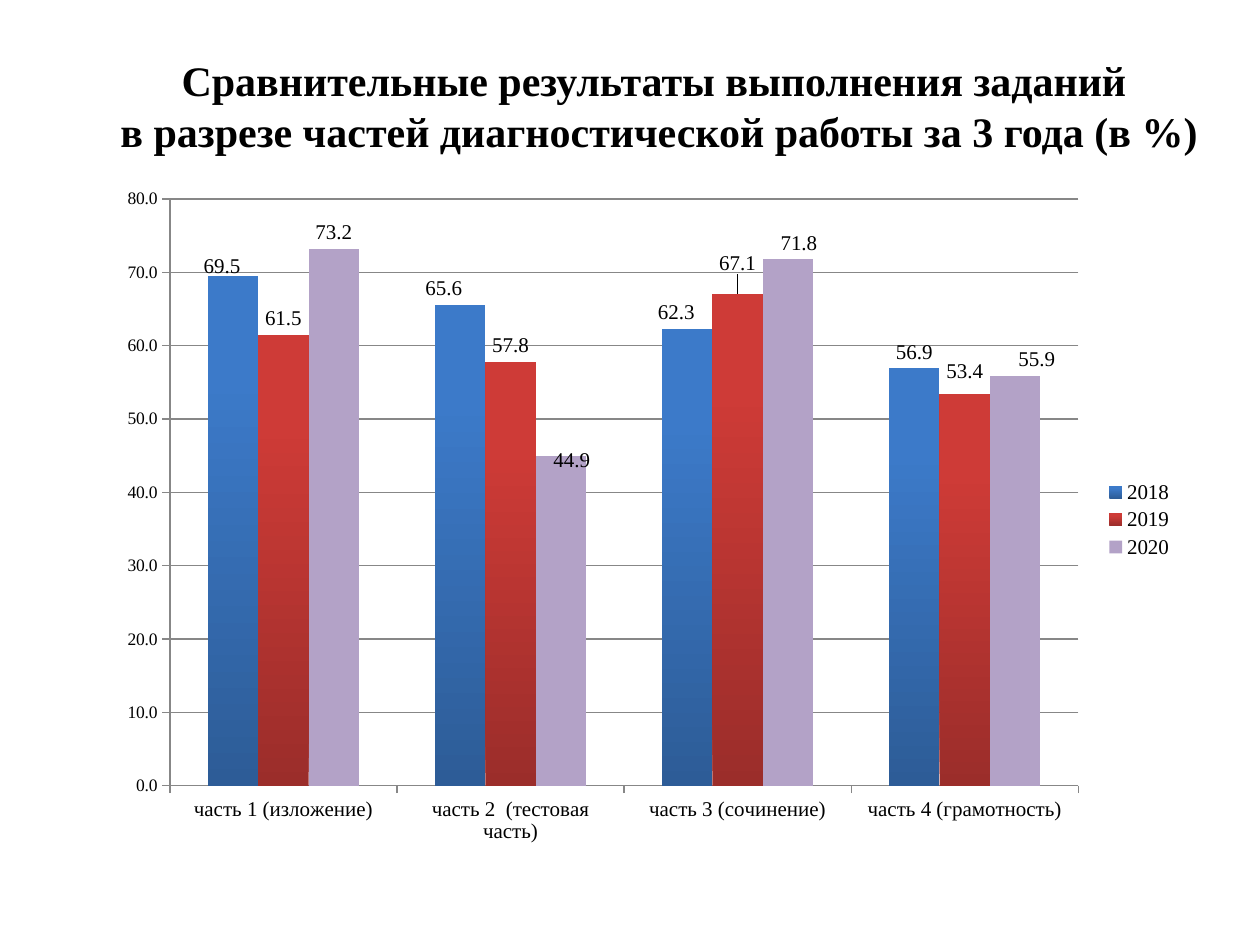
from lxml import etree
from pptx import Presentation
from pptx.chart.data import CategoryChartData
from pptx.dml.color import RGBColor
from pptx.enum import chart as kinds, text
from pptx.oxml.ns import qn
from pptx.util import Pt

BLACK = RGBColor(0x00, 0x00, 0x00)
GREY = RGBColor(0x87, 0x87, 0x87)
BLUE = RGBColor(0x3C, 0x7A, 0xC9)
DARK_BLUE = RGBColor(0x2D, 0x5C, 0x97)
RED = RGBColor(0xCE, 0x3B, 0x37)
DARK_RED = RGBColor(0x9B, 0x2D, 0x2A)
LILAC = RGBColor(0xB3, 0xA2, 0xC7)
FONT = "Times New Roman"

TITLE = [
    "Сравнительные результаты выполнения заданий ",
    "в разрезе частей диагностической работы за 3 года (в %)",
]
PARTS = [
    "часть 1 (изложение)",
    "часть 2  (тестовая часть)",
    "часть 3 (сочинение)",
    "часть 4 (грамотность)",
]
# year: values, colours from bar foot to top, label shifts as shares of the chart
YEARS = {
    "2018": ([69.5, 65.6, 62.3, 56.9], [DARK_BLUE, BLUE],
             {0: (-0.01, 0.01), 1: (-0.015, 0), 2: (-0.01, 0)}),
    "2019": ([61.5, 57.8, 67.1, 53.4], [DARK_RED, RED],
             {2: (0, -0.02), 3: (0, -0.01)}),
    "2020": ([73.2, 44.9, 71.8, 55.9], [LILAC],
             {1: (0.01, 0.03), 2: (0.01, 0), 3: (0.02, 0)}),
}


def set_font(font, size, bold=False):
    font.name, font.size, font.bold = FONT, Pt(size), bold
    font.color.rgb = BLACK


def make_layout(**values):
    """Return a manual chart layout; values are shares of the chart area."""
    layout = etree.Element(qn("c:layout"))
    manual = etree.SubElement(layout, qn("c:manualLayout"))
    for name, value in values.items():
        etree.SubElement(manual, qn(f"c:{name}")).set("val", str(value))
    return layout


def add_title(page, left, top, width, height):
    title = page.shapes.title
    title.left, title.top, title.width, title.height = map(Pt, (left, top, width, height))
    frame = title.text_frame
    frame.text = "\n".join(TITLE)
    frame.word_wrap = False
    frame.vertical_anchor = text.MSO_ANCHOR.MIDDLE
    for para in frame.paragraphs:
        para.alignment = text.PP_ALIGN.CENTER
        para._p.get_or_add_pPr().set("indent", str(Pt(32.4)))
        set_font(para.runs[0].font, 24, bold=True)


def style_axis(axis, size):
    set_font(axis.tick_labels.font, size)
    axis.format.line.color.rgb = GREY
    axis.major_tick_mark = kinds.XL_TICK_MARK.OUTSIDE


def style_series(series, colours, shifts):
    fill = series.format.fill
    if len(colours) == 1:
        fill.solid()
        fill.fore_color.rgb = colours[0]
    else:
        fill.gradient()
        fill.gradient_angle = 90
        for stop, colour, position in zip(fill.gradient_stops, colours, (0, 0.8)):
            stop.color.rgb, stop.position = colour, position

    labels = series.data_labels
    labels.show_value = True
    labels.number_format, labels.number_format_is_linked = "0.0", False
    labels.position = kinds.XL_LABEL_POSITION.OUTSIDE_END
    set_font(labels.font, 12)
    for index, (across, down) in shifts.items():
        label = series.points[index].data_label
        label.position = kinds.XL_LABEL_POSITION.OUTSIDE_END
        set_font(label.font, 12)
        node = series._element.xpath(f"c:dLbls/c:dLbl[c:idx/@val='{index}']")[0]
        node.insert(1, make_layout(x=across, y=down))


def add_results_chart(page, left, top, width, height):
    data = CategoryChartData(number_format="0.0")
    data.categories = PARTS
    for year, (values, _, _) in YEARS.items():
        data.add_series(year, values)
    chart = page.shapes.add_chart(
        kinds.XL_CHART_TYPE.COLUMN_CLUSTERED, *map(Pt, (left, top, width, height)), data
    ).chart
    chart.has_title = False
    set_font(chart.font, 10)

    chart.has_legend = True
    chart.legend.position = kinds.XL_LEGEND_POSITION.RIGHT
    chart.legend.include_in_layout = False
    set_font(chart.legend.font, 12)

    style_axis(chart.category_axis, 12)
    scale = chart.value_axis
    style_axis(scale, 10)
    scale.minimum_scale, scale.maximum_scale, scale.major_unit = 0, 80, 10
    scale.tick_labels.number_format = "0.0"
    scale.tick_labels.number_format_is_linked = False
    scale.major_gridlines.format.line.color.rgb = GREY

    plot = chart.plots[0]
    plot.gap_width, plot.overlap = 150, 0
    plot.vary_by_categories = False
    for series in plot.series:
        _, colours, shifts = YEARS[series.name]
        style_series(series, colours, shifts)

    area = chart._chartSpace.xpath("c:chart/c:plotArea")[0]
    for layout in area.findall(qn("c:layout")):
        area.remove(layout)
    area.insert(0, make_layout(layoutTarget="inner", xMode="edge", yMode="edge",
                               x=0.06, y=0.03, w=0.84, h=0.86))


def main():
    deck = Presentation()
    deck.slide_width, deck.slide_height = Pt(720), Pt(540)
    page = deck.slides.add_slide(deck.slide_layouts.get_by_name("Title Only"))
    add_title(page, 26, 27.4, 669, 65.5)
    add_results_chart(page, 60, 102, 618, 390)
    deck.save("out.pptx")


if __name__ == "__main__":
    main()
